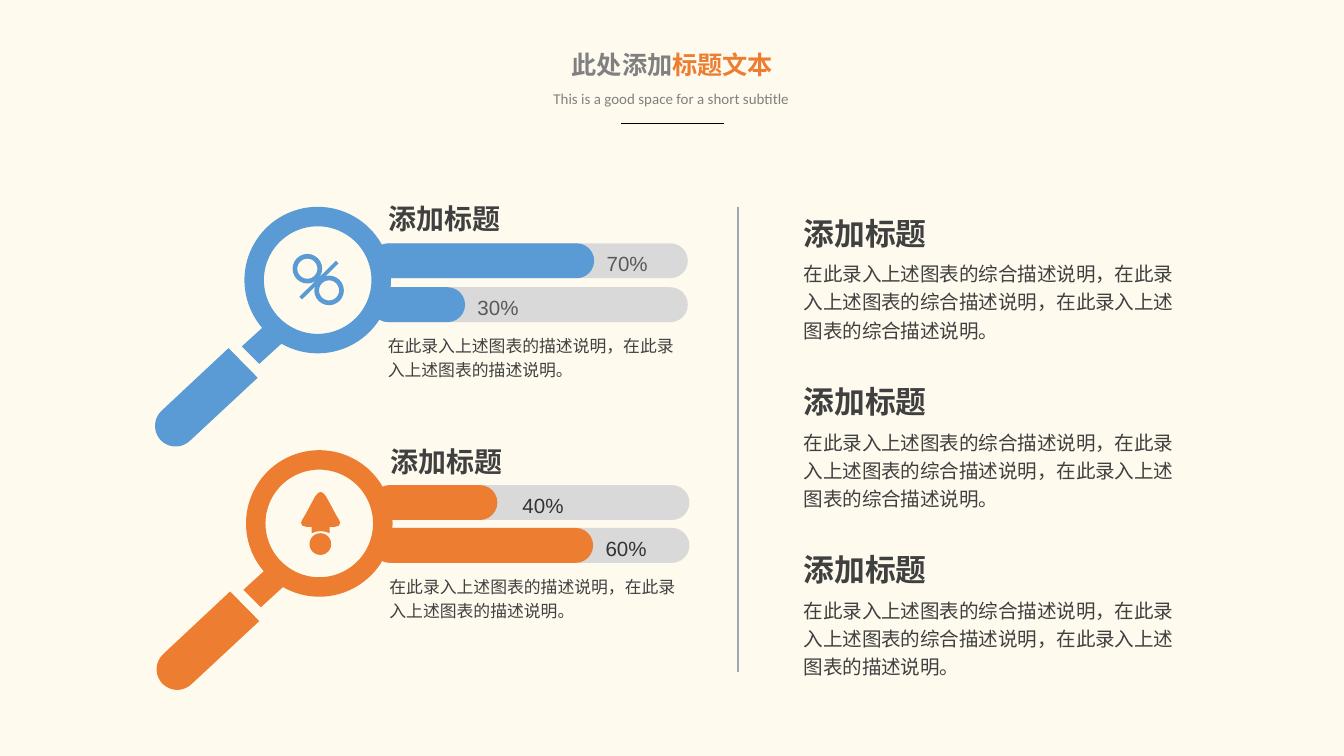
from math import cos, radians, sin

from lxml import etree
from pptx import Presentation
from pptx.dml.color import RGBColor
from pptx.enum.shapes import MSO_CONNECTOR as Link, MSO_SHAPE as Preset
from pptx.enum.text import MSO_ANCHOR as Anchor, MSO_AUTO_SIZE as AutoSize, PP_ALIGN as Align
from pptx.oxml.ns import qn
from pptx.util import Cm, Pt

CREAM = RGBColor(0xFE, 0xFA, 0xEE)
GREY = RGBColor(0x80, 0x80, 0x80)
TRACK = RGBColor(0xD9, 0xD9, 0xD9)
BLUE = RGBColor(0x5B, 0x9B, 0xD5)
ORANGE = RGBColor(0xED, 0x7D, 0x31)
INK = RGBColor(0x40, 0x40, 0x40)
LABEL_SOFT = RGBColor(0x59, 0x59, 0x59)
LABEL_DARK = RGBColor(0x33, 0x33, 0x33)
RULE = RGBColor(0x9D, 0xA8, 0xB1)
BLACK = RGBColor(0, 0, 0)
CJK = "Noto Sans CJK SC"

HEADING = "添加标题"
SHORT = "在此录入上述图表的描述说明，在此录入上述图表的描述说明。"
PHRASE = "在此录入上述图表的综合描述说明"
LONG = f"{PHRASE}，{PHRASE}，{PHRASE}。"
LAST = f"{PHRASE}，{PHRASE}，在此录入上述图表的描述说明。"


def place(box, left, top, width, height):
    box.left, box.top, box.width, box.height = Cm(left), Cm(top), Cm(width), Cm(height)


def write(box, runs, size, font, bold=False, align=Align.LEFT, spacing=None,
          wrap=True, inset=(0.25, 0.13)):
    """Fill a text box with (text, colour) runs."""
    frame = box.text_frame
    frame.word_wrap = wrap
    frame.auto_size = AutoSize.SHAPE_TO_FIT_TEXT
    frame.vertical_anchor = Anchor.TOP
    frame.margin_left = frame.margin_right = Cm(inset[0])
    frame.margin_top = frame.margin_bottom = Cm(inset[1])
    para = frame.paragraphs[0]
    para.alignment = align
    para.line_spacing = spacing
    for text, color in runs:
        span = para.add_run()
        span.text = text
        span.font.name, span.font.size = font, Pt(size)
        span.font.bold, span.font.color.rgb = bold, color


def add_text(page, area, runs, size, font, **style):
    box = page.shapes.add_textbox(*map(Cm, area))
    write(box, runs, size, font, **style)


def add_note(page, area, text, size, **style):
    add_text(page, area, [(text, INK)], size, CJK, inset=(0.18, 0.1), **style)


def paint(shape, color):
    shape.shadow.inherit = False
    shape.fill.solid()
    shape.fill.fore_color.rgb = color
    shape.line.fill.background()


def add_preset(page, preset, area, color, adjust=None):
    shape = page.shapes.add_shape(preset, *map(Cm, area))
    if adjust is not None:
        shape.adjustments[0] = adjust
    paint(shape, color)


def add_outline(page, left, top, points, color):
    corners = [(Cm(left + x), Cm(top + y)) for x, y in points]
    builder = page.shapes.build_freeform(*corners[0])
    builder.add_line_segments(corners[1:])
    paint(builder.convert_to_shape(), color)


def add_rule(page, start, end, color, width):
    rule = page.shapes.add_connector(Link.STRAIGHT, *map(Cm, start + end))
    rule.line.color.rgb, rule.line.width = color, Pt(width)
    etree.SubElement(rule.element.spPr, qn("a:effectLst"))


def add_header(page, left, top, width):
    title = page.shapes.title
    place(title, left, top, width, 0.84)
    write(title, [("此处添加", GREY), ("标题文本", ORANGE)], 13.5, "Calibri",
          bold=True, align=Align.CENTER, wrap=False)
    add_text(page, (left - 0.33, top + 0.76, width + 0.63, 0.61),
             [("This is a good space for a short subtitle", GREY)], 8, "Calibri",
             align=Align.CENTER, wrap=False)
    middle = left + width / 2
    add_rule(page, (middle - 0.97, top + 1.53), (middle + 0.97, top + 1.53), BLACK, 0.5)


def add_bar(page, left, top, fill, label, color, label_color, label_width):
    add_preset(page, Preset.ROUNDED_RECTANGLE, (left, top, 5.99, 0.66), TRACK, 0.5)
    add_preset(page, Preset.ROUNDED_RECTANGLE, (left, top, fill, 0.66), color, 0.5)
    add_text(page, (left + fill - 0.05, top - 0.07, label_width, 0.81),
             [(label, label_color)], 11, "Arial", align=Align.CENTER, spacing=1.2)


def add_magnifier(page, left, top, color):
    # Neck, ring, then a handle with a half-round end
    add_outline(page, left, top, [(0.84, 2.46), (0.28, 2.97), (-0.05, 2.64), (0.51, 2.13)], color)
    add_preset(page, Preset.DONUT, (left, top, 2.77, 2.77), color, 0.133)
    cap = [(-1.3 + 0.39 * cos(radians(a)), 4.14 + 0.39 * sin(radians(a)))
           for a in range(225, 44, -10)]
    add_outline(page, left, top, [(-0.3, 2.67), *cap, (0.25, 3.23)], color)


def add_percent_icon(page, left, top, color):
    for shift in (0, 0.41):
        add_preset(page, Preset.DONUT, (left + shift, top + shift, 0.56, 0.56), color, 0.16)
    add_outline(page, left, top, [(0.87, 0.18), (0.18, 0.86), (0.13, 0.81), (0.82, 0.13)], color)


def add_arrow_icon(page, left, top, color):
    half = [(0, 0), (0.05, 0.02), (0.1, 0.08), (0.15, 0.17), (0.29, 0.43), (0.35, 0.53),
            (0.37, 0.59), (0.34, 0.64), (0.26, 0.66), (0.17, 0.66), (0.17, 0.78),
            (0.09, 0.75), (0, 0.74)]
    mirrored = [(-x, y) for x, y in half[-2:0:-1]]
    add_outline(page, left + 0.38, top, half + mirrored, color)
    add_preset(page, Preset.OVAL, (left + 0.17, top + 0.78, 0.41, 0.41), color)


def add_panel(page, left, top, color, label_color, bar_top, pitch, bars, note_top, icon):
    for index, (fill, label, label_width) in enumerate(bars):
        add_bar(page, left + 2.39, top + bar_top + index * pitch, fill, label,
                color, label_color, label_width)
    add_magnifier(page, left, top, color)
    icon(page, left + 1.0 - 0.09, top + 0.89, color) if icon is add_percent_icon else \
        icon(page, left + 1.03, top + 0.79, color)
    add_note(page, (left + 2.55, top - 0.2, 2.51, 0.84), HEADING, 15, bold=True, wrap=False)
    add_note(page, (left + 2.53, top + note_top, 5.87, 1.12), SHORT, 9, spacing=1.2)


def add_summary(page, left, top, pitch, texts):
    for index, text in enumerate(texts):
        y = top + index * pitch
        add_note(page, (left, y, 2.74, 0.89), HEADING, 16.5, bold=True, wrap=False)
        add_note(page, (left, y + 0.81, 7.54, 1.8), text, 10.5, spacing=1.2)


def main():
    deck = Presentation()
    deck.slide_width, deck.slide_height = Cm(25.4), Cm(14.29)
    page = deck.slides.add_slide(deck.slide_layouts[5])
    page.background.fill.solid()
    page.background.fill.fore_color.rgb = CREAM

    add_header(page, 10.52, 0.81, 4.37)
    add_rule(page, (13.94, 3.91), (13.94, 12.7), RULE, 1)
    add_panel(page, 4.62, 3.91, BLUE, LABEL_SOFT, 0.69, 0.83,
              [(4.22, "70%", 1.35), (1.78, "30%", 1.35)], 2.26, add_percent_icon)
    add_panel(page, 4.65, 8.51, ORANGE, LABEL_DARK, 0.66, 0.81,
              [(2.36, "40%", 1.83), (4.17, "60%", 1.35)], 2.21, add_arrow_icon)
    add_summary(page, 15.01, 3.96, 3.18, [LONG, LONG, LAST])
    deck.save("out.pptx")


if __name__ == "__main__":
    main()
